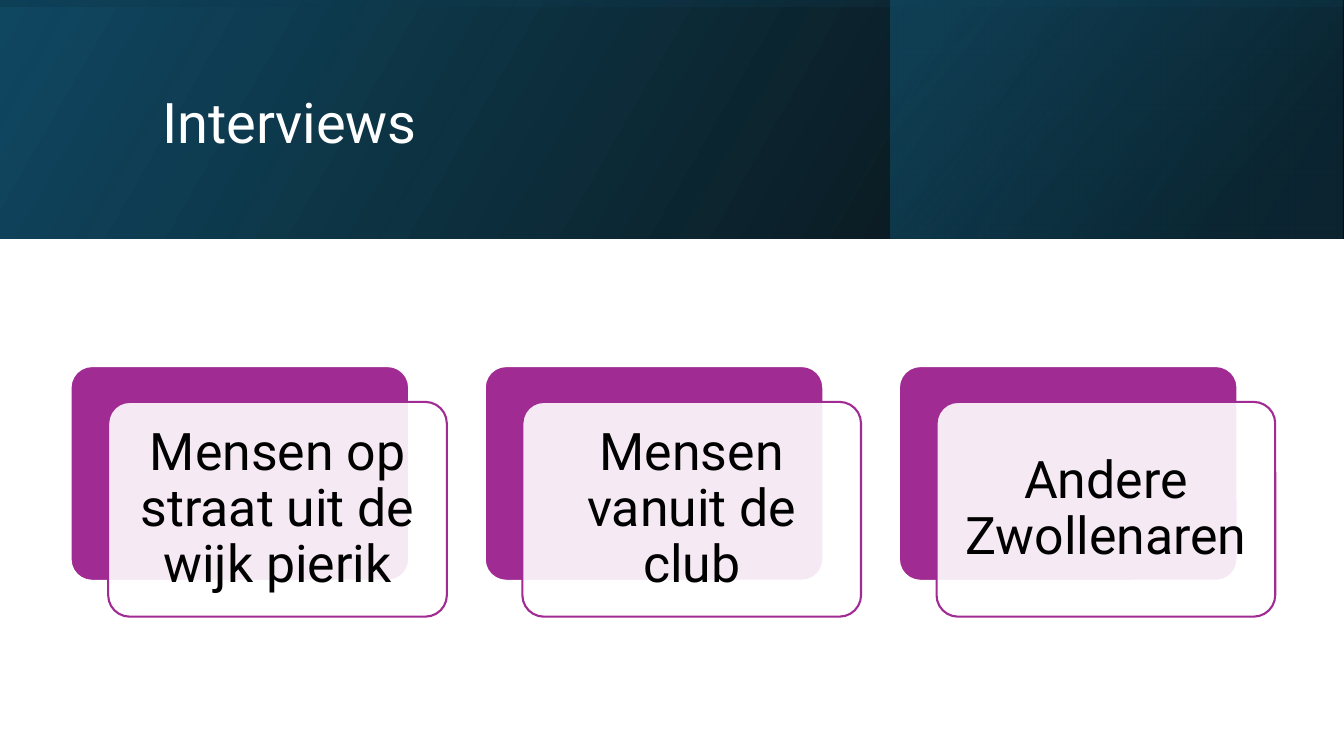
from lxml.etree import SubElement
from pptx import Presentation
from pptx.dml.color import RGBColor
from pptx.enum.shapes import MSO_SHAPE as Preset
from pptx.enum.text import MSO_ANCHOR as Anchor, PP_ALIGN as Align
from pptx.oxml.ns import qn
from pptx.util import Pt

WHITE = RGBColor(0xFF, 0xFF, 0xFF)
BLACK = RGBColor(0x00, 0x00, 0x00)
PURPLE = RGBColor(0xA0, 0x2B, 0x93)
NAVY = RGBColor(0x10, 0x48, 0x62)
DEEP_TEAL = RGBColor(0x0B, 0x30, 0x41)
TEAL = RGBColor(0x15, 0x60, 0x82)

PAGE_WIDTH, PAGE_HEIGHT = 960, 540
BAND_HEIGHT = 170.6
CARD_WIDTH, CARD_HEIGHT = 241.9, 153.4
CARD_LEFT, CARD_TOP, CARD_PITCH = 50.4, 261.5, 295.85
FRONT_SHIFT_X, FRONT_SHIFT_Y = 26.9, 25.6
TEXT_MARGIN = 4.5
GROUPS = ["Mensen op straat uit de wijk pierik", "Mensen vanuit de club", "Andere Zwollenaren"]


def add_alpha(color_element, percent):
    SubElement(color_element, qn("a:alpha"), val=str(percent * 1000))


def add_gradient(page, left, top, width, height, stops, angle, rotation=0):
    box = page.shapes.add_shape(Preset.RECTANGLE, Pt(left), Pt(top), Pt(width), Pt(height))
    box.shadow.inherit = False
    box.line.fill.background()
    box.rotation = rotation
    properties = box._element.spPr
    properties.find(qn("a:xfrm")).set("flipH", "1")
    box.fill.gradient()
    gradient = properties.find(qn("a:gradFill"))
    for child in list(gradient):
        gradient.remove(child)
    gradient.set("rotWithShape", "1")
    stop_list = SubElement(gradient, qn("a:gsLst"))
    for position, color, opacity in stops:
        stop = SubElement(stop_list, qn("a:gs"), pos=str(position * 1000))
        add_alpha(SubElement(stop, qn("a:srgbClr"), val=str(color)), opacity)
    SubElement(gradient, qn("a:lin"), ang=str(angle * 60000), scaled="0")


def add_panel(shapes, left, top, fill, line, opacity=100):
    box = shapes.add_shape(Preset.ROUNDED_RECTANGLE, Pt(left), Pt(top), Pt(CARD_WIDTH), Pt(CARD_HEIGHT))
    box.adjustments[0] = 0.1
    box.shadow.inherit = False
    box.fill.solid()
    box.fill.fore_color.rgb = fill
    box.line.color.rgb = line
    box.line.width = Pt(1.5)
    if opacity < 100:
        add_alpha(box._element.spPr.find(qn("a:solidFill"))[0], opacity)


def add_text(shapes, text, left, top, width, height, size, color, align=Align.LEFT, inset_x=7.2, inset_y=3.6):
    box = shapes.add_textbox(Pt(left), Pt(top), Pt(width), Pt(height))
    frame = box.text_frame
    frame.word_wrap = True
    frame.vertical_anchor = Anchor.MIDDLE
    frame.margin_left = frame.margin_right = Pt(inset_x)
    frame.margin_top = frame.margin_bottom = Pt(inset_y)
    para = frame.paragraphs[0]
    para.alignment = align
    para.line_spacing = 0.9
    span = para.add_run()
    span.text = text
    span.font.name = "Roboto"
    span.font.size = Pt(size)
    span.font.color.rgb = color


def add_card(shapes, text, left, top):
    add_panel(shapes, left, top, PURPLE, WHITE)
    front_left, front_top = left + FRONT_SHIFT_X, top + FRONT_SHIFT_Y
    add_panel(shapes, front_left, front_top, WHITE, PURPLE, opacity=90)
    add_text(shapes, text, front_left + TEXT_MARGIN, front_top + TEXT_MARGIN,
             CARD_WIDTH - 2 * TEXT_MARGIN, CARD_HEIGHT - 2 * TEXT_MARGIN,
             size=37, color=BLACK, align=Align.CENTER, inset_x=10.8, inset_y=10.8)


def add_header(page):
    add_gradient(page, 0, 0, PAGE_WIDTH, BAND_HEIGHT, [(0, BLACK, 96), (100, NAVY, 100)], 330)
    add_gradient(page, 636, 0, 323, BAND_HEIGHT, [(19, DEEP_TEAL, 68), (100, TEAL, 48)], 320)
    offset = (PAGE_WIDTH - BAND_HEIGHT) / 2
    add_gradient(page, offset, -offset, BAND_HEIGHT, PAGE_WIDTH,
                 [(23, NAVY, 16), (99, BLACK, 45)], 350, rotation=270)
    add_text(page.shapes, "Interviews", 108.7, 27.4, 765.4, 123.8, size=40, color=WHITE)


def main():
    deck = Presentation()
    deck.slide_width, deck.slide_height = Pt(PAGE_WIDTH), Pt(PAGE_HEIGHT)
    page = deck.slides.add_slide(deck.slide_layouts[6])
    add_header(page)
    diagram = page.shapes.add_group_shape()
    for index, text in enumerate(GROUPS):
        add_card(diagram.shapes, text, CARD_LEFT + index * CARD_PITCH, CARD_TOP)
    deck.save("out.pptx")


if __name__ == "__main__":
    main()
